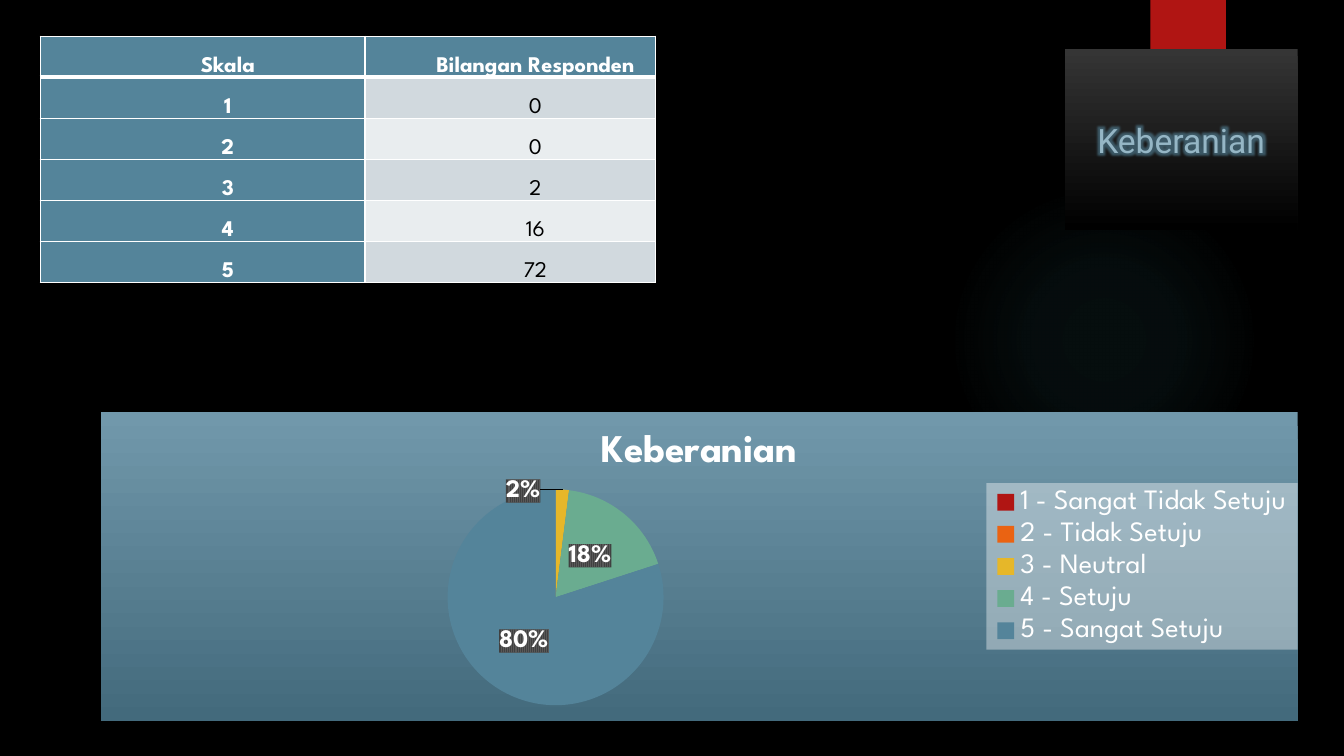
"""Build the Keberanian survey slide with a table of answers and a pie chart."""
import pptx
import pptx.chart.data
import pptx.dml.color
import pptx.enum.chart
import pptx.enum.shapes
import pptx.enum.text
import pptx.oxml
import pptx.oxml.ns
import pptx.util
from pptx.util import Inches

HEADING = "Keberanian"
TABLE_ROWS = [
    ("Skala", "Bilangan Responden"),
    ("1", "0"),
    ("2", "0"),
    ("3", "2"),
    ("4", "16"),
    ("5", "72"),
]
ANSWERS = [
    ("1 - Sangat Tidak Setuju", 0, "red"),
    ("2 - Tidak Setuju", 0, "orange"),
    ("3 - Neutral", 2, "yellow"),
    ("4 - Setuju", 18, "green"),
    ("5 - Sangat Setuju", 80, "blue"),
]
COLORS = {
    "black": "000000", "white": "FFFFFF", "red": "B01513", "orange": "EA6312",
    "yellow": "E6B729", "green": "6AAC90", "blue": "54849A", "teal": "50B9C1",
    "band_dark": "D1D9DE", "band_light": "E9EDEF", "title_text": "95B6C5",
    "title_top": "353535", "chart_top": "7198AB", "chart_bottom": "436A7C",
    "label_line": "595959", "label_back": "404040",
}
FONT = "League Spartan"
TITLE_FONT = "Roboto"
COLUMN_WIDTHS = (3.22, 2.88)
ROW_HEIGHT = 0.4
NAMESPACES = pptx.oxml.ns.nsdecls("a", "c")


def rgb(name):
    return pptx.dml.color.RGBColor.from_string(COLORS[name])


def element(tag, content="", attributes=""):
    return pptx.oxml.parse_xml(f"<{tag} {NAMESPACES} {attributes}>{content}</{tag}>")


def color_xml(name, alpha=100):
    return f'<a:srgbClr val="{COLORS[name]}"><a:alpha val="{alpha * 1000}"/></a:srgbClr>'


def gradient(stops, circle=False):
    stops_xml = "".join(
        f'<a:gs pos="{position * 1000}">{color_xml(name, alpha)}</a:gs>'
        for position, name, alpha in stops)
    direction = '<a:lin ang="5400000" scaled="0"/>'
    if circle:
        direction = ('<a:path path="circle"><a:fillToRect l="50000" t="50000" '
                     'r="50000" b="50000"/></a:path>')
    return element("a:gradFill", f"<a:gsLst>{stops_xml}</a:gsLst>{direction}")


def set_gradient(shape, stops, circle=False):
    shape.fill.solid()
    properties = shape._element.spPr
    properties.replace(properties.find(pptx.oxml.ns.qn("a:solidFill")), gradient(stops, circle))


def style_font(font, size, color="white", bold=False, name=FONT):
    font.size = pptx.util.Pt(size)
    font.bold = bold
    font.name = name
    font.color.rgb = rgb(color)


def write(text_frame, text, size, indent=0, line_spacing=None, **font_format):
    paragraph = text_frame.paragraphs[0]
    paragraph.alignment = pptx.enum.text.PP_ALIGN.CENTER
    paragraph.line_spacing = line_spacing
    if indent:
        paragraph._p.get_or_add_pPr().set("marL", str(Inches(indent)))
    run = paragraph.add_run()
    run.text = text
    style_font(run.font, size, **font_format)
    return run


def add_decoration(slide, kind, left, top, width, height, fill):
    shape = slide.shapes.add_shape(
        kind, Inches(left), Inches(top), Inches(width), Inches(height))
    shape.shadow.inherit = False
    shape.fill.solid()
    shape.fill.fore_color.rgb = rgb(fill)
    shape.line.fill.background()
    return shape


def set_borders(cell, **points):
    properties = cell._tc.get_or_add_tcPr()
    for index, side in enumerate("LRTB"):
        width = pptx.util.Pt(points.get(side, 1))
        properties.insert(index, element(
            f"a:ln{side}", f"<a:solidFill>{color_xml('white')}</a:solidFill>", f'w="{width}"'))


def add_answer_table(slide):
    table = slide.shapes.add_table(
        len(TABLE_ROWS), len(COLUMN_WIDTHS), Inches(0.4), Inches(0.36),
        Inches(sum(COLUMN_WIDTHS)), Inches(ROW_HEIGHT * len(TABLE_ROWS))).table
    for column, width in zip(table.columns, COLUMN_WIDTHS):
        column.width = Inches(width)
    for row_index, row in enumerate(TABLE_ROWS):
        for column_index, text in enumerate(row):
            cell = table.cell(row_index, column_index)
            heading = row_index == 0 or column_index == 0
            band = "band_dark" if row_index % 2 else "band_light"
            cell.margin_left = cell.margin_right = Inches(0.07)
            cell.margin_top = cell.margin_bottom = 0
            cell.fill.solid()
            cell.fill.fore_color.rgb = rgb("blue" if heading else band)
            set_borders(cell, B=3 if row_index == 0 else 1, T=3 if row_index == 1 else 1)
            write(cell.text_frame, text, 16, indent=0.5, line_spacing=2.0,
                  color="white" if heading else "black", bold=heading)


def manual_layout(target="", edge=True, **fractions):
    content = f'<c:layoutTarget val="{target}"/>' if target else ""
    if edge:
        content += '<c:xMode val="edge"/><c:yMode val="edge"/>'
    content += "".join(f'<c:{key} val="{value}"/>' for key, value in fractions.items())
    return element("c:layout", f"<c:manualLayout>{content}</c:manualLayout>")


def set_layout(parent, layout, before):
    for old in parent.findall(pptx.oxml.ns.qn("c:layout")):
        parent.remove(old)
    parent.find(pptx.oxml.ns.qn(before)).addprevious(layout)


def format_labels(plot):
    plot.has_data_labels = True
    labels = plot.data_labels
    labels.show_percentage = True
    labels.show_value = False
    labels.number_format = "0%"
    labels.number_format_is_linked = False
    labels.position = pptx.enum.chart.XL_LABEL_POSITION.CENTER
    style_font(labels.font, 18, bold=True)
    group = labels._element
    group.find(pptx.oxml.ns.qn("c:txPr")).addprevious(element(
        "c:spPr", f'<a:pattFill prst="narVert"><a:fgClr>{color_xml("label_line")}</a:fgClr>'
        f'<a:bgClr>{color_xml("label_back")}</a:bgClr></a:pattFill>'))
    moved = element("c:dLbl", '<c:idx val="2"/>')
    moved.append(manual_layout(edge=False, x=-0.03, y=-0.17))
    for child in group:
        moved.append(pptx.oxml.parse_xml(pptx.oxml.xmlchemy.serialize_for_reading(child))
                     if child.tag != pptx.oxml.ns.qn("c:showLeaderLines")
                     else element("c:separator", " "))
    hidden = [element("c:dLbl", f'<c:idx val="{index}"/><c:delete val="1"/>')
              for index, answer in enumerate(ANSWERS) if answer[1] == 0]
    for index, label in enumerate(hidden + [moved]):
        group.insert(index, label)
    series = plot.series[0]._element
    series.find(pptx.oxml.ns.qn("c:cat")).addprevious(group)


def add_answer_chart(slide):
    data = pptx.chart.data.CategoryChartData()
    data.categories = [answer[0] for answer in ANSWERS]
    data.add_series("Series 1", [answer[1] for answer in ANSWERS])
    chart = slide.shapes.add_chart(
        pptx.enum.chart.XL_CHART_TYPE.PIE, Inches(1), Inches(4.09),
        Inches(11.87), Inches(3.06), data).chart
    style_font(chart.font, 10)
    chart.has_title = True
    write(chart.chart_title.text_frame, HEADING, 28, bold=True)
    plot = chart.plots[0]
    plot.vary_by_categories = True
    for index, answer in enumerate(ANSWERS):
        fill = plot.series[0].points[index].format.fill
        fill.solid()
        fill.fore_color.rgb = rgb(answer[2])
    format_labels(plot)
    chart.has_legend = True
    legend = chart.legend
    legend.position = pptx.enum.chart.XL_LEGEND_POSITION.RIGHT
    legend.include_in_layout = False
    style_font(legend.font, 20)
    set_layout(legend._element, manual_layout(x=0.74, y=0.23, w=0.26, h=0.54), "c:overlay")
    legend._element.find(pptx.oxml.ns.qn("c:txPr")).addprevious(element(
        "c:spPr", f"<a:solidFill>{color_xml('white', 39)}</a:solidFill>"))
    set_layout(plot._element.getparent(),
               manual_layout("inner", x=0.03, y=0.25, w=0.7, h=0.7), "c:pieChart")
    background = element("c:spPr")
    background.append(gradient([(0, "chart_top", 100), (100, "chart_bottom", 100)]))
    background.append(element("a:ln", "<a:noFill/>"))
    chart._chartSpace.chart.addnext(background)


def place_title(slide):
    title = slide.shapes.title
    title.left, title.top = Inches(10.56), Inches(0.49)
    title.width, title.height = Inches(2.31), Inches(1.79)
    set_gradient(title, [(0, "title_top", 100), (100, "black", 100)])
    title.text_frame.vertical_anchor = pptx.enum.text.MSO_ANCHOR.MIDDLE
    run = write(title.text_frame, HEADING, 24, color="title_text", name=TITLE_FONT)
    run._r.rPr.find(pptx.oxml.ns.qn("a:solidFill")).addnext(element(
        "a:effectLst", f'<a:glow rad="{Inches(0.1)}">{color_xml("blue", 60)}</a:glow>'))
    slide.shapes._spTree.append(title._element)


def main():
    presentation = pptx.Presentation()
    presentation.slide_width, presentation.slide_height = Inches(13.33), Inches(7.5)
    slide = presentation.slides.add_slide(presentation.slide_layouts[5])
    slide.background.fill.solid()
    slide.background.fill.fore_color.rgb = rgb("black")
    shapes = pptx.enum.shapes.MSO_SHAPE
    halo = add_decoration(slide, shapes.OVAL, 9.41, 1.83, 3.08, 3.08, "teal")
    set_gradient(halo, [(0, "teal", 7), (36, "teal", 6), (69, "teal", 0)], circle=True)
    add_decoration(slide, shapes.RECTANGLE, 11.41, 0, 0.75, 1.25, "red")
    add_answer_table(slide)
    add_answer_chart(slide)
    place_title(slide)
    presentation.save("out.pptx")


if __name__ == "__main__":
    main()
